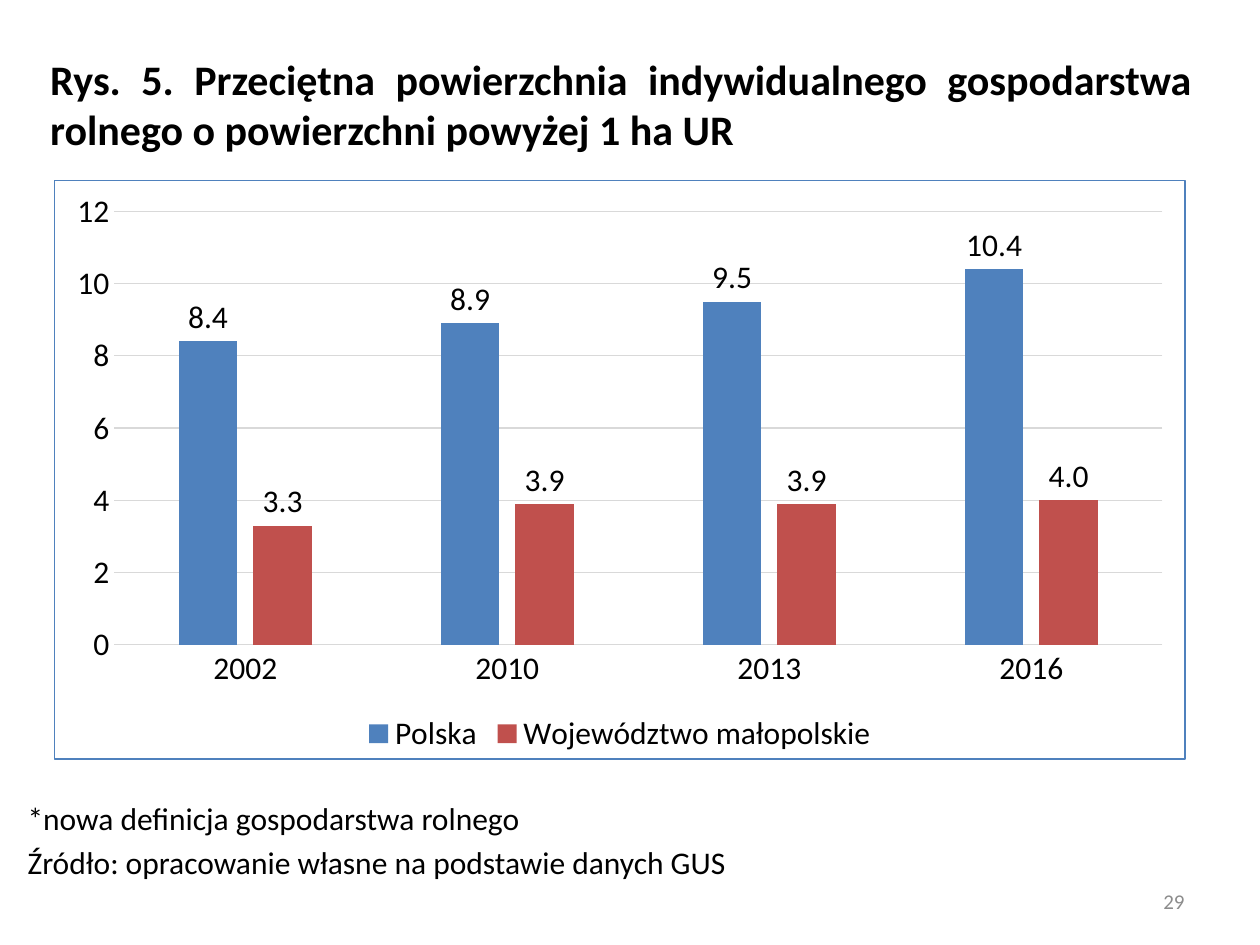
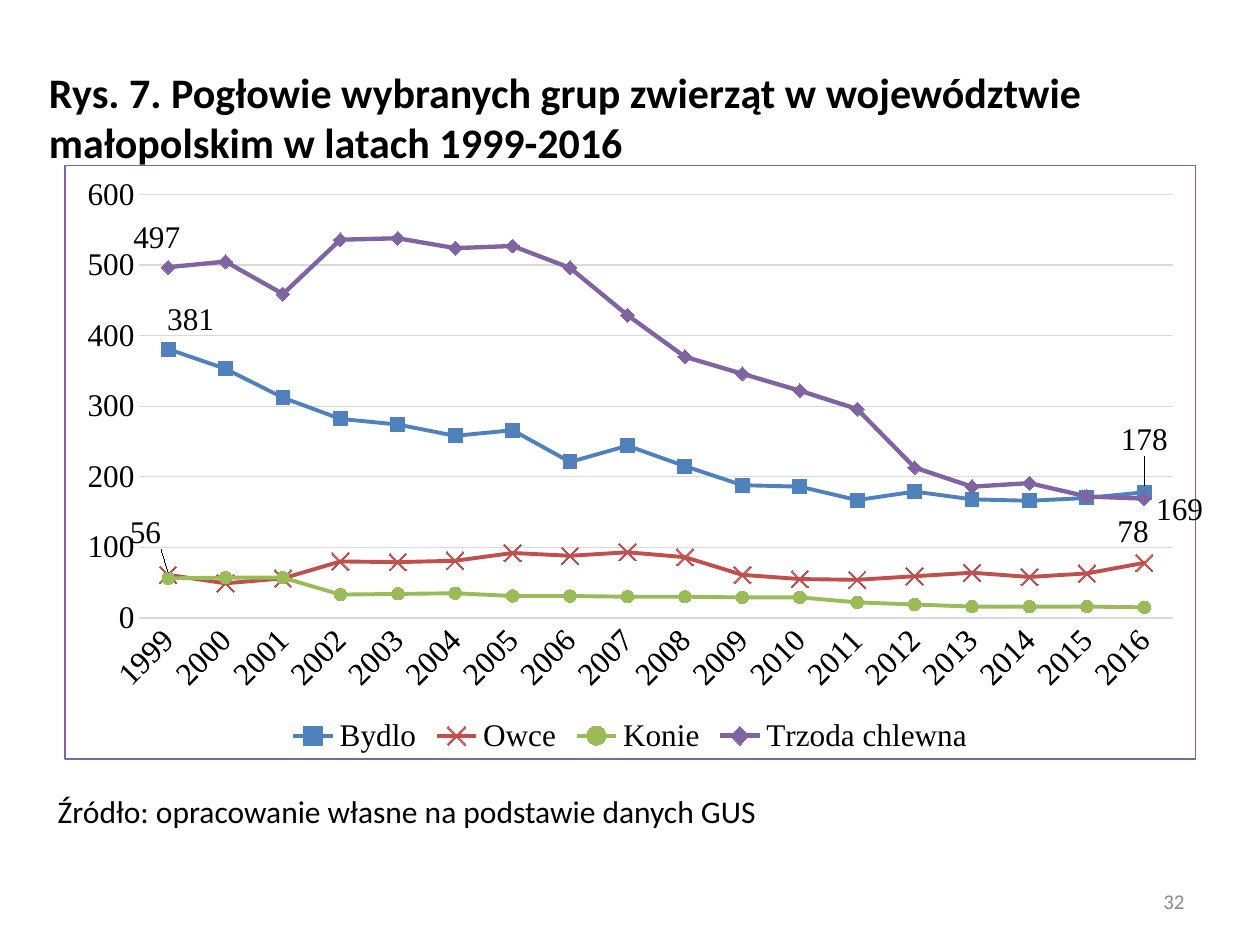
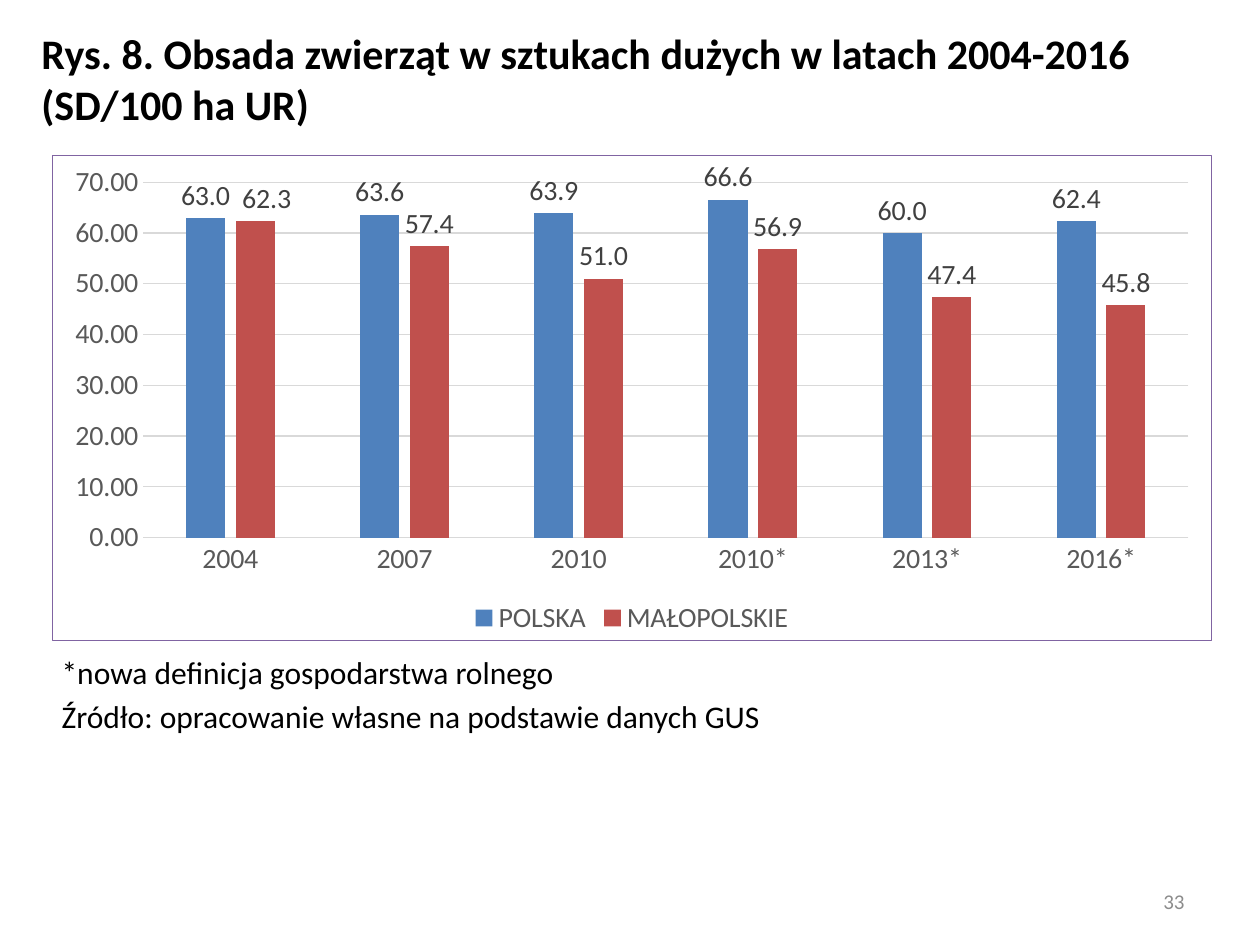
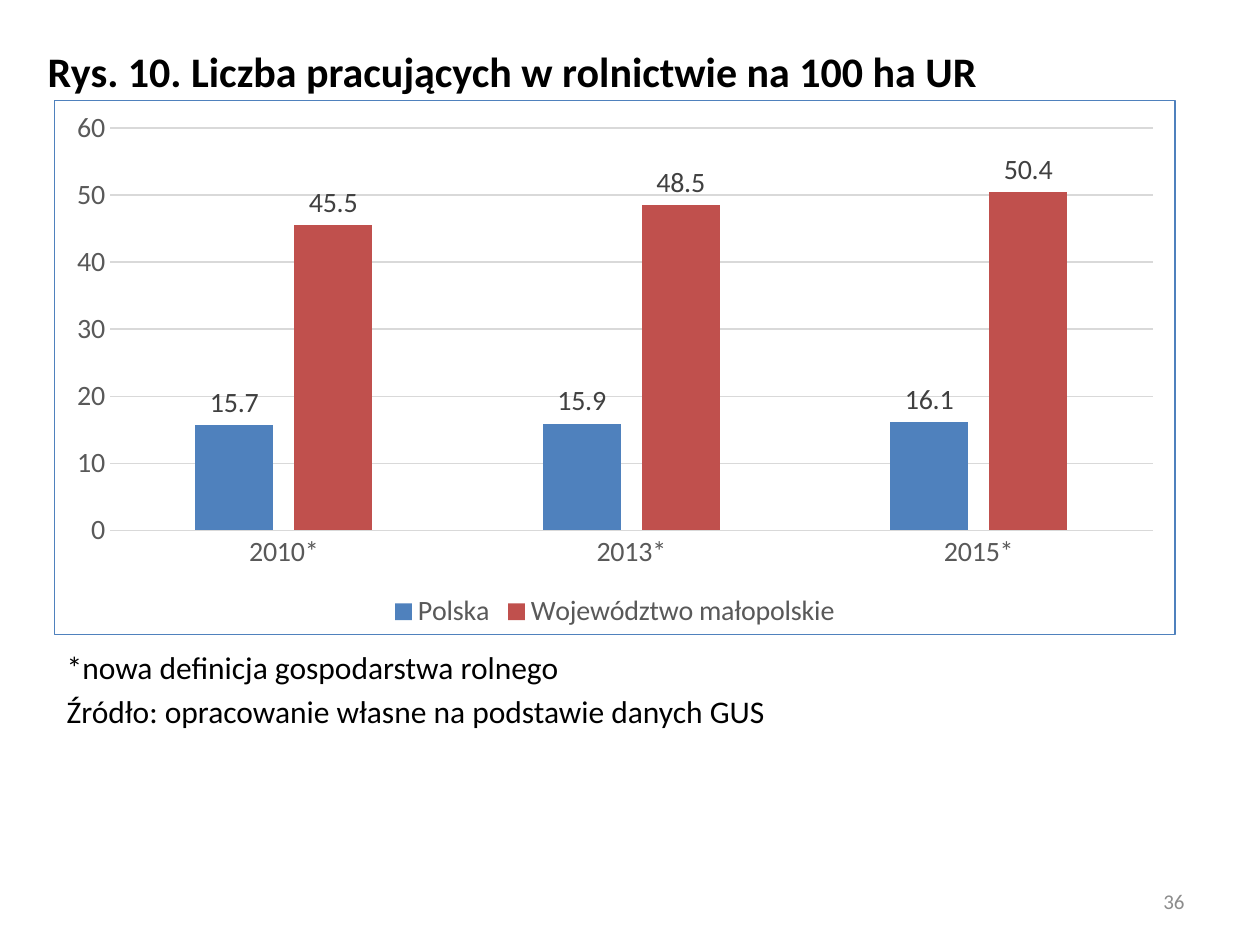
"""Builds four chart slides on farming in the Małopolska region."""
from pptx import Presentation
from pptx.chart.data import CategoryChartData
from pptx.dml.color import RGBColor
from pptx.enum import chart as ch, text
from pptx.oxml import parse_xml
from pptx.oxml.ns import nsdecls
from pptx.util import Inches, Pt

BLACK, GRAY, LABEL, GRID, NUMBER = "000000", "595959", "404040", "D9D9D9", "8C8C8C"
BLUE, RED, GREEN, PURPLE = "4F81BD", "C0504D", "9BBB59", "8064A2"
NEW_DEF = "*nowa definicja gospodarstwa rolnego"
SOURCE = "Źródło: opracowanie własne na podstawie danych GUS"
LEFT, JUSTIFY, RIGHT = text.PP_ALIGN.LEFT, text.PP_ALIGN.JUSTIFY, text.PP_ALIGN.RIGHT
TOP, MIDDLE = text.MSO_ANCHOR.TOP, text.MSO_ANCHOR.MIDDLE
ABOVE, BESIDE = ch.XL_LABEL_POSITION.ABOVE, ch.XL_LABEL_POSITION.RIGHT
OUTSIDE = ch.XL_LABEL_POSITION.OUTSIDE_END
MARK = ch.XL_MARKER_STYLE


def color(value):
    return RGBColor.from_string(value)


def add_text(s, box, lines, size, fill=BLACK, bold=False, align=LEFT, anchor=TOP, spacing=None):
    tf = s.shapes.add_textbox(*[Inches(v) for v in box]).text_frame
    tf.word_wrap = True
    tf.vertical_anchor = anchor
    tf.text = "\n".join(lines)
    for p in tf.paragraphs:
        p.alignment = align
        p.line_spacing = spacing
        for r in p.runs:
            r.font.name, r.font.size, r.font.bold = "Calibri", Pt(size), bold
            r.font.color.rgb = color(fill)


slides = [
    dict(number="29", title="Rys. 5. Przeciętna powierzchnia indywidualnego gospodarstwa rolnego "
         "o powierzchni powyżej 1 ha UR",
         title_box=(0.3, 0.37, 9.26, 0.91), title_style=dict(align=JUSTIFY, anchor=MIDDLE),
         notes=[NEW_DEF, SOURCE], notes_box=(0.12, 6.25, 7.91, 0.8),
         chart_box=(0.43, 1.43, 8.98, 4.6), border=BLUE, font="Calibri", size=18,
         axis_color=BLACK, label_color=BLACK, axis_format="General", label_format="#,##0.0",
         cats=["2002", "2010", "2013", "2016"],
         series=[("Polska", BLUE, [8.4, 8.9, 9.5, 10.4]),
                 ("Województwo małopolskie", RED, [3.3, 3.9, 3.9, 4.0])],
         moved={}),
    dict(number="32", title="Rys. 7. Pogłowie wybranych grup zwierząt w województwie małopolskim "
         "w latach 1999-2016",
         title_box=(0.29, 0.47, 9.26, 0.91), title_style=dict(anchor=MIDDLE),
         notes=[SOURCE], notes_box=(0.36, 6.19, 7.91, 0.43),
         chart_box=(0.51, 1.31, 9.04, 4.72), border=PURPLE, font="Times New Roman", size=18,
         axis_color=BLACK, label_color=BLACK, axis_format="#,##0", label_format="#,##0",
         cats=[str(year) for year in range(1999, 2017)],
         series=[("Bydlo", BLUE, [381, 353, 312, 282, 274, 258, 266, 221, 244, 215, 188, 186,
                                  167, 179, 168, 166, 170, 178]),
                 ("Owce", RED, [61, 49, 56, 80, 79, 81, 92, 88, 93, 86, 61, 55,
                                54, 59, 64, 58, 63, 78]),
                 ("Konie", GREEN, [56, 57, 57, 33, 34, 35, 31, 31, 30, 30, 29, 29,
                                   22, 19, 16, 16, 16, 15]),
                 ("Trzoda chlewna", PURPLE, [497, 505, 459, 536, 538, 524, 527, 496, 429, 370,
                                             346, 322, 296, 213, 186, 191, 172, 169])],
         markers=[(MARK.SQUARE, 8, 2.25), (MARK.X, 10, 2.25),
                  (MARK.CIRCLE, 7, 2.25), (MARK.DIAMOND, 8, 2.5)],
         moved={(0, 0): (ABOVE, 0.02, 0), (0, 17): (ABOVE, 0, -0.04),
                (1, 17): (ABOVE, -0.01, 0), (2, 0): (ABOVE, -0.02, -0.03),
                (3, 0): (ABOVE, -0.01, 0), (3, 17): (BESIDE, 0, 0.02)}),
    dict(number="33", title="Rys. 8. Obsada zwierząt w sztukach dużych w latach 2004-2016 "
         "(SD/100 ha UR)",
         title_box=(0.23, 0.17, 9.59, 0.91), title_style={},
         notes=[NEW_DEF, SOURCE], notes_box=(0.39, 5.09, 7.91, 0.8),
         chart_box=(0.41, 1.23, 9.21, 3.86), border=PURPLE, font="Calibri", size=16,
         axis_color=GRAY, label_color=LABEL, axis_format="#,##0.00", label_format="#,##0.0",
         cats=["2004", "2007", "2010", "2010*", "2013*", "2016*"],
         series=[("POLSKA", BLUE, [63.0, 63.6, 63.9, 66.6, 60.0, 62.4]),
                 ("MAŁOPOLSKIE", RED, [62.3, 57.4, 51.0, 56.9, 47.4, 45.8])],
         moved={(1, 0): (OUTSIDE, 0.01, 0)}),
    dict(number="36", title="Rys. 10. Liczba pracujących w rolnictwie na 100 ha UR",
         title_box=(0.28, 0.25, 9.45, 0.57), title_style=dict(align=JUSTIFY, spacing=1.15),
         notes=[NEW_DEF, SOURCE], notes_box=(0.43, 5.05, 7.91, 0.8),
         chart_box=(0.43, 0.79, 8.9, 4.25), border=BLUE, font="Calibri", size=16,
         axis_color=GRAY, label_color=LABEL, axis_format="General", label_format="General",
         cats=["2010*", "2013*", "2015*"],
         series=[("Polska", BLUE, [15.7, 15.9, 16.1]),
                 ("Województwo małopolskie", RED, [45.5, 48.5, 50.4])],
         moved={}),
]

prs = Presentation()
prs.slide_width, prs.slide_height = Inches(10), Inches(7.5)

for d in slides:
    s = prs.slides.add_slide(prs.slide_layouts[6])
    add_text(s, (7.17, 6.95, 2.33, 0.4), [d["number"]], 12, NUMBER, align=RIGHT, anchor=MIDDLE)
    add_text(s, d["title_box"], [d["title"]], 24, bold=True, **d["title_style"])

    markers = d.get("markers")
    kind = ch.XL_CHART_TYPE.LINE_MARKERS if markers else ch.XL_CHART_TYPE.COLUMN_CLUSTERED
    data = CategoryChartData(number_format=d["label_format"])
    data.categories = d["cats"]
    for name, fill, values in d["series"]:
        data.add_series(name, values)
    chart = s.shapes.add_chart(kind, *[Inches(v) for v in d["chart_box"]], data).chart
    chart.has_title = False
    chart.has_legend = True
    chart.legend.position = ch.XL_LEGEND_POSITION.BOTTOM
    chart.legend.include_in_layout = False
    chart._chartSpace.chart.addnext(parse_xml(
        f'<c:spPr {nsdecls("c", "a")}><a:noFill/><a:ln w="9525"><a:solidFill>'
        f'<a:srgbClr val="{d["border"]}"/></a:solidFill></a:ln></c:spPr>'))

    cat_axis, val_axis = chart.category_axis, chart.value_axis
    fonts = [chart.font, chart.legend.font, cat_axis.tick_labels.font, val_axis.tick_labels.font]
    for font in fonts:
        font.name, font.size = d["font"], Pt(d["size"])
        font.color.rgb = color(d["axis_color"])
    for axis in (cat_axis, val_axis):
        axis.major_tick_mark = axis.minor_tick_mark = ch.XL_TICK_MARK.NONE
    val_axis.format.line.fill.background()
    val_axis.has_major_gridlines = True
    for line in (cat_axis.format.line, val_axis.major_gridlines.format.line):
        line.color.rgb = color(GRID)
        line.width = Pt(0.75)
    val_axis.tick_labels.number_format = d["axis_format"]
    val_axis.tick_labels.number_format_is_linked = False

    plot = chart.plots[0]
    plot.vary_by_categories = False
    if markers:
        cat_axis._element.txPr.bodyPr.set("rot", "-2700000")
    else:
        plot.gap_width, plot.overlap = 219, -27

    for i, (ser, (name, fill, values)) in enumerate(zip(plot.series, d["series"])):
        labels = ser.data_labels
        labels.show_value = not markers
        labels.number_format = d["label_format"]
        labels.number_format_is_linked = False
        fonts = [labels.font]
        if markers:
            style, size, width = markers[i]
            ser.smooth = False
            ser.format.line.color.rgb = color(fill)
            ser.format.line.width = Pt(width)
            ser.marker.style, ser.marker.size = style, size
            ser.marker.format.line.color.rgb = color(fill)
            if style == MARK.X:
                ser.marker.format.fill.background()
            else:
                ser.marker.format.fill.solid()
                ser.marker.format.fill.fore_color.rgb = color(fill)
        else:
            labels.position = OUTSIDE
            ser.format.fill.solid()
            ser.format.fill.fore_color.rgb = color(fill)
        for (row, point), (position, dx, dy) in d["moved"].items():
            if row == i:
                label = ser.points[point].data_label
                fonts.append(label.font)
                label.position = position
                idx = ser._element.xpath(f'.//c:dLbl/c:idx[@val="{point}"]')[0]
                idx.addnext(parse_xml(
                    f'<c:layout {nsdecls("c")}><c:manualLayout><c:x val="{dx}"/>'
                    f'<c:y val="{dy}"/></c:manualLayout></c:layout>'))
        for font in fonts:
            font.name, font.size = d["font"], Pt(d["size"])
            font.color.rgb = color(d["label_color"])

    add_text(s, d["notes_box"], d["notes"], 18, align=JUSTIFY, spacing=1.15)

prs.save("out.pptx")
